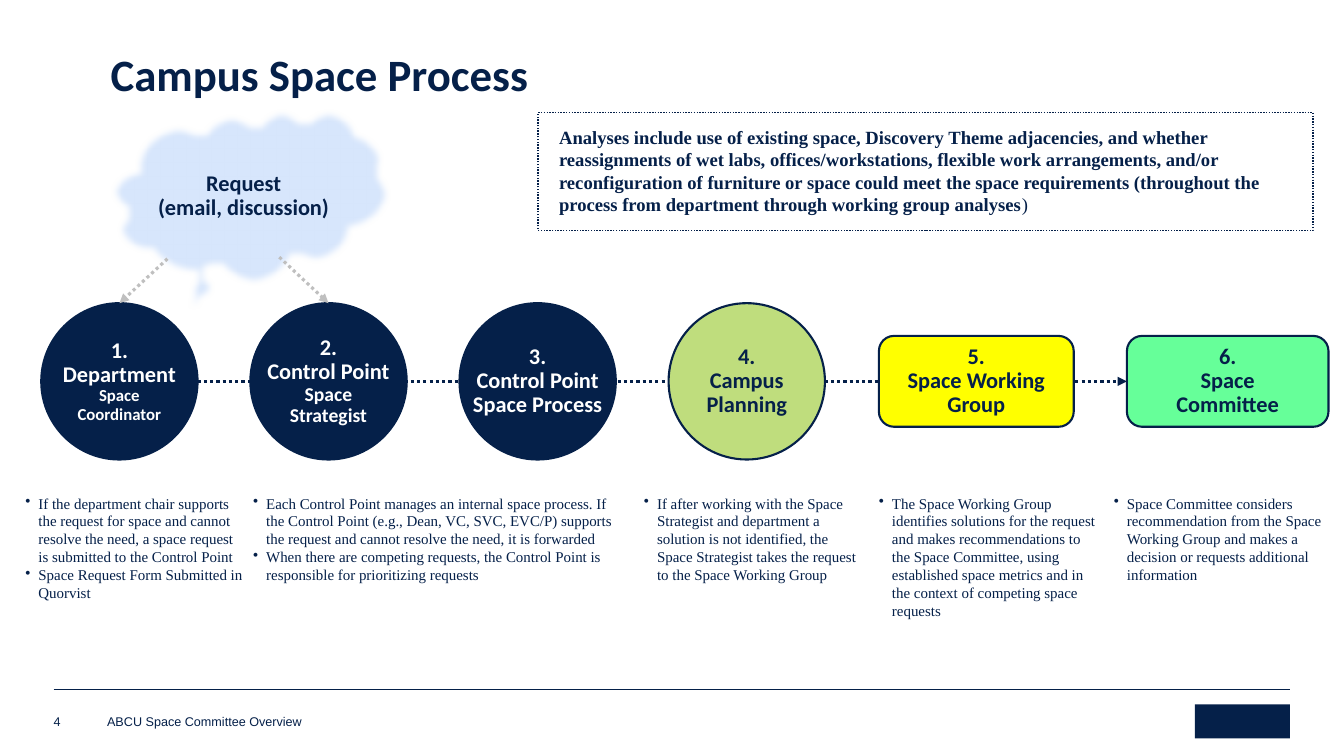
from dataclasses import dataclass

from pptx import Presentation
from pptx import util as u
from pptx.dml import color as dc
from pptx.enum import dml, shapes, text
from pptx.oxml import ns, xmlchemy as xc

Cm, Pt = u.Cm, u.Pt
SHAPE, ALIGN, ANCHOR = shapes.MSO_SHAPE, text.PP_ALIGN, text.MSO_ANCHOR


@dataclass(frozen=True)
class Theme:
    """Colours, fonts and type sizes of the slide."""
    navy: str = "052049"
    white: str = "FFFFFF"
    grey: str = "BFBFBF"
    sky: str = "D7E6FC"
    lime: str = "BFDD7D"
    yellow: str = "FFFF00"
    mint: str = "66FF99"
    head: str = "Calibri"
    body: str = "Times New Roman"
    foot: str = "Arial"
    title: float = 32
    step: float = 16
    role: float = 14
    small_role: float = 12
    analysis: float = 13.3
    note: float = 10.7
    footer: float = 9


T = Theme()

STEPS = [
    (SHAPE.OVAL, T.navy, T.white, "1.\nDepartment", "Space\nCoordinator", T.small_role),
    (SHAPE.OVAL, T.navy, T.white, "2.\nControl Point", "Space\nStrategist", T.role),
    (SHAPE.OVAL, T.navy, T.white, "3.\nControl Point\nSpace Process", "", T.role),
    (SHAPE.OVAL, T.lime, T.navy, "4.\nCampus\nPlanning", "", T.role),
    (SHAPE.ROUNDED_RECTANGLE, T.yellow, T.navy, "5.\nSpace Working\nGroup", "", T.role),
    (SHAPE.ROUNDED_RECTANGLE, T.mint, T.navy, "6.\nSpace\nCommittee", "", T.role),
]

NOTES = [
    (0, 5.56, "If the department chair supports the request for space and cannot resolve the need, "
     "a space request is submitted to the Control Point\n"
     "Space Request Form Submitted in Quorvist"),
    (5.74, 9.14, "Each Control Point manages an internal space process. If the Control Point "
     "(e.g., Dean, VC, SVC, EVC/P) supports the request and cannot resolve the need, it is forwarded\n"
     "When there are competing requests, the Control Point is responsible for prioritizing requests"),
    (15.59, 5.56, "If after working with the Space Strategist and department a solution is not "
     "identified, the Space Strategist takes the request to the Space Working Group"),
    (21.51, 5.56, "The Space Working Group identifies solutions for the request and makes "
     "recommendations to the Space Committee, using established space metrics and in the "
     "context of competing space requests"),
    (27.43, 5.56, "Space Committee considers recommendation from the Space Working Group and "
     "makes a decision or requests additional information"),
]

ANALYSES = ("Analyses include use of existing space, Discovery Theme adjacencies, and whether "
            "reassignments of wet labs, offices/workstations, flexible work arrangements, and/or "
            "reconfiguration of furniture or space could meet the space requirements (throughout "
            "the process from department through working group analyses")


def rgb(value):
    """Return a colour from its hex text."""
    return dc.RGBColor.from_string(value)


def element(parent, tag, **attrs):
    """Append an XML element with attributes and return it."""
    e = xc.OxmlElement(tag)
    for key, value in attrs.items():
        e.set(key, str(value))
    parent.append(e)
    return e


def write(tf, words, size, font=T.head, color=T.navy, bold=False, align=ALIGN.LEFT,
          spacing=None, bullet=False, join=False):
    """Add one paragraph per line of words, or join them to the last paragraph."""
    for line in words.split("\n"):
        p = tf.paragraphs[-1]
        if p.runs and not join:
            p = tf.add_paragraph()
        p.alignment = align
        if spacing:
            p.line_spacing = spacing
        if bullet:
            pPr = p._p.get_or_add_pPr()
            pPr.set("marL", str(Cm(0.33)))
            pPr.set("indent", str(-Cm(0.33)))
            element(pPr, "a:buChar", char="•")
        r = p.add_run()
        r.text = line
        r.font.size, r.font.name, r.font.bold = Pt(size), font, bold
        r.font.color.rgb = rgb(color)


def frame(sp, anchor=ANCHOR.TOP, wrap=True, insets=(0, 0, 0, 0)):
    """Set anchor, wrapping and insets in cm and return the text frame."""
    tf = sp.text_frame
    tf.word_wrap, tf.vertical_anchor = wrap, anchor
    tf.margin_left, tf.margin_top, tf.margin_right, tf.margin_bottom = map(Cm, insets)
    return tf


def add_box(s, x, y, w, h, **kw):
    """Add a text box and return its frame."""
    return frame(s.shapes.add_textbox(Cm(x), Cm(y), Cm(w), Cm(h)), **kw)


def add_shape(s, kind, x, y, w, h, fill=None, line=None, width=1.5):
    """Add a flat preset shape."""
    sp = s.shapes.add_shape(kind, Cm(x), Cm(y), Cm(w), Cm(h))
    sp.shadow.inherit = False
    if fill:
        sp.fill.solid()
        sp.fill.fore_color.rgb = rgb(fill)
    else:
        sp.fill.background()
    if line:
        sp.line.color.rgb, sp.line.width = rgb(line), Pt(width)
    else:
        sp.line.fill.background()
    return sp


def add_line(s, x1, y1, x2, y2, color, width, arrow=False):
    """Add a plain rule, or a dotted arrow."""
    c = s.shapes.add_connector(shapes.MSO_CONNECTOR.STRAIGHT, Cm(x1), Cm(y1), Cm(x2), Cm(y2))
    c.line.color.rgb, c.line.width = rgb(color), Pt(width)
    spPr = c._element.spPr
    if arrow:
        c.line.dash_style = dml.MSO_LINE.ROUND_DOT
        element(spPr.find(ns.qn("a:ln")), "a:tailEnd", type="triangle")
    element(spPr, "a:effectLst")
    return c


def draw_title(s, x, y, w, h):
    """Draw the slide title."""
    tf = add_box(s, x, y, w, h, anchor=ANCHOR.BOTTOM, insets=(0.33, 0.18, 0.33, 0.18))
    write(tf, "Campus Space Process", T.title, bold=True, spacing=0.85)


def draw_analyses(s, x, y, w, h):
    """Draw the dotted box about analyses."""
    sp = add_shape(s, SHAPE.RECTANGLE, x, y, w, h, line=T.navy, width=1)
    sp.line.dash_style = dml.MSO_LINE.ROUND_DOT
    tf = frame(sp, insets=(0.53, 0.33, 0.33, 0.33))
    write(tf, ANALYSES, T.analysis, font=T.body, bold=True)
    write(tf, ")", T.analysis, font=T.body, join=True)


def draw_steps(s, x, y, d):
    """Draw the chain of six steps and return their shapes."""
    mid, pitch, box_h = y + d / 2, 5.27, 2.29
    chain = add_line(s, x + d, mid, x + 27.36, mid, T.navy, 2.25, arrow=True)
    places = [(x + i * pitch, d, d) for i in range(4)]
    places += [(x + 21.11, 4.91, box_h), (x + 27.36, 5.08, box_h)]
    steps = []
    for (left, w, h), (kind, fill, color, name, role, size) in zip(places, STEPS):
        sp = add_shape(s, kind, left, mid - h / 2, w, h, fill=fill, line=T.navy)
        tf = frame(sp, anchor=ANCHOR.MIDDLE, wrap=False)
        look = dict(color=color, bold=True, align=ALIGN.CENTER, spacing=0.9)
        write(tf, name, T.step, **look)
        if role:
            write(tf, role, size, **look)
        steps.append(sp)
    chain.end_connect(steps[-1], 1)
    return steps


def draw_request(s, x, y, w, h, targets):
    """Draw the request cloud and its arrows to the target steps."""
    cloud = add_shape(s, SHAPE.CLOUD_CALLOUT, x, y, w, h, fill=T.sky)
    element(cloud._element.spPr.find(ns.qn("a:effectLst")), "a:softEdge", rad=63500)
    tf = add_box(s, x + 0.9, y + 1.2, 4.94, 2.04, anchor=ANCHOR.MIDDLE, wrap=False)
    write(tf, "Request\n(email, discussion)", T.step, bold=True, align=ALIGN.CENTER, spacing=0.9)
    for (dx, dy), target in zip([(1.45, 3.8), (4.27, 3.76)], targets):
        arrow = add_line(s, x + dx, y + dy, x, y + h, T.grey, 2.25, arrow=True)
        arrow.end_connect(target, 0)


def draw_notes(s, x, y, h):
    """Draw the bulleted notes under the steps."""
    for dx, w, words in NOTES:
        write(add_box(s, x + dx, y, w, h), words, T.note, font=T.body, bullet=True)


def draw_footer(s, x, y, w):
    """Draw the rule, page number, footer text and emblem block."""
    add_line(s, x, y, x + w, y, T.navy, 0.25)
    for dx, width, words in [(0, 0.9, "4"), (1.35, 16, "ABCU Space Committee Overview")]:
        tf = add_box(s, x + dx, y + 0.56, width, 0.43, anchor=ANCHOR.BOTTOM)
        write(tf, words, T.footer, font=T.foot)
    add_shape(s, SHAPE.RECTANGLE, x + w - 2.4, y + 0.38, 2.4, 0.86, fill=T.navy)


def main():
    """Build the slide and save it."""
    prs = Presentation()
    prs.slide_width, prs.slide_height = Cm(33.87), Cm(19.05)
    s = prs.slides.add_slide(prs.slide_layouts[6])
    draw_title(s, 2.46, 1.02, 30.28, 1.7)
    draw_analyses(s, 13.56, 2.84, 19.53, 2.97)
    steps = draw_steps(s, 1.04, 7.64, 3.94)
    draw_request(s, 2.77, 2.72, 7.09, 4.47, steps[:2])
    draw_notes(s, 0.64, 12.45, 3.2)
    draw_footer(s, 1.35, 17.37, 31.16)
    prs.save("out.pptx")


if __name__ == "__main__":
    main()
